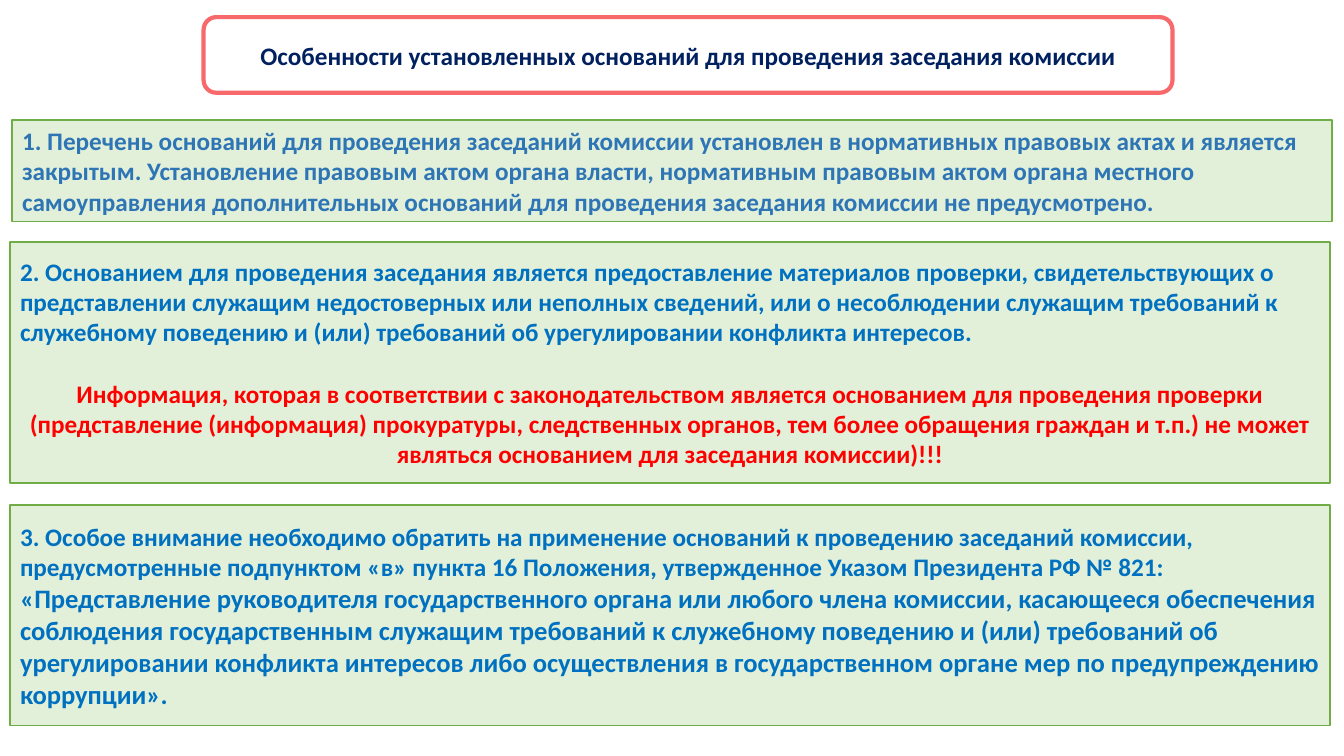
"""Build a slide on the grounds for holding a commission meeting."""
from pptx import Presentation
from pptx.dml.color import RGBColor
from pptx.enum.shapes import MSO_SHAPE
from pptx.enum.text import MSO_ANCHOR, MSO_AUTO_SIZE, PP_ALIGN
from pptx.util import Inches, Pt

RECT, ROUNDED = MSO_SHAPE.RECTANGLE, MSO_SHAPE.ROUNDED_RECTANGLE
MIDDLE, NO_FIT = MSO_ANCHOR.MIDDLE, MSO_AUTO_SIZE.NONE
LEFT, CENTER = PP_ALIGN.LEFT, PP_ALIGN.CENTER
WIDTH, HEIGHT = Inches(13.33), Inches(7.5)
FONT = "Calibri"
PANEL_WIDTH = 98.2
COLORS = {
    "panel": "E2F0D9",
    "border": "70AD47",
    "frame": "F8696B",
    "title": "002060",
    "steel": "2E75B6",
    "blue": "0070C0",
    "red": "FF0000",
}
TITLE = "Особенности установленных оснований для проведения заседания комиссии"
LIST_OF_GROUNDS = (
    "1. Перечень оснований для проведения заседаний комиссии установлен в нормативных "
    "правовых актах и является закрытым. Установление правовым актом органа власти, "
    "нормативным правовым актом органа местного самоуправления дополнительных оснований "
    "для проведения заседания комиссии не предусмотрено."
)
AUDIT_MATERIALS = (
    "2. Основанием для проведения заседания является предоставление материалов проверки, "
    "свидетельствующих о представлении служащим недостоверных или неполных сведений, или "
    "о несоблюдении служащим требований к служебному поведению и (или) требований об "
    "урегулировании конфликта интересов."
)
WARNING = (
    "Информация, которая в соответствии с законодательством является основанием для "
    "проведения проверки (представление (информация) прокуратуры, следственных органов, "
    "тем более обращения граждан и т.п.) не может являться основанием для заседания "
    "комиссии)!!!"
)
SPECIAL_ATTENTION = (
    "3. Особое внимание необходимо обратить на применение оснований к проведению "
    "заседаний комиссии, предусмотренные подпунктом «в» пункта 16 Положения, "
    "утвержденное Указом Президента РФ № 821:"
)
QUOTE = (
    "«Представление руководителя государственного органа или любого члена комиссии, "
    "касающееся обеспечения соблюдения государственным служащим требований к служебному "
    "поведению и (или) требований об урегулировании конфликта интересов либо "
    "осуществления в государственном органе мер по предупреждению коррупции»."
)


def rgb(name):
    """Return the named palette colour."""
    return RGBColor.from_string(COLORS[name])


def box(left, top, width, height):
    """Convert percentages of the slide into a position and size."""
    return (int(WIDTH * left / 100), int(HEIGHT * top / 100),
            int(WIDTH * width / 100), int(HEIGHT * height / 100))


def write(p, text, color, size=18, align=LEFT, before=0):
    """Fill a paragraph with bold text."""
    p.text = text
    p.alignment = align
    p.space_before = Pt(before)
    p.font.name, p.font.size, p.font.bold = FONT, Pt(size), True
    p.font.color.rgb = rgb(color)


def add_box(slide, kind, area, line, weight, fill=None):
    """Add an outlined shape, filled when a colour is given."""
    sp = slide.shapes.add_shape(kind, *box(*area))
    sp.shadow.inherit = False
    sp.line.color.rgb = rgb(line)
    sp.line.width = Pt(weight)
    if fill:
        sp.fill.solid()
        sp.fill.fore_color.rgb = rgb(fill)
    else:
        sp.fill.background()
    return sp


def add_panel(slide, left, top, height, paragraphs):
    """Add a green panel holding the given paragraphs."""
    sp = add_box(slide, RECT, (left, top, PANEL_WIDTH, height), "border", 1, "panel")
    tf = sp.text_frame
    tf.word_wrap = True
    tf.vertical_anchor = MIDDLE
    for i, paragraph in enumerate(paragraphs):
        write(tf.add_paragraph() if i else tf.paragraphs[0], **paragraph)


def add_title(slide):
    """Place the title inside its rounded frame."""
    add_box(slide, ROUNDED, (15.15, 2.27, 72.09, 10), "frame", 3)
    title = slide.shapes.title
    title.left, title.top, title.width, title.height = box(15.68, 5.33, 71.04, 4)
    tf = title.text_frame
    tf.margin_left = tf.margin_right = tf.margin_top = tf.margin_bottom = 0
    tf.word_wrap = True
    tf.auto_size = NO_FIT
    tf.vertical_anchor = MIDDLE
    write(tf.paragraphs[0], TITLE, "title", align=CENTER)


def main():
    """Build and save the slide."""
    prs = Presentation()
    prs.slide_width, prs.slide_height = WIDTH, HEIGHT
    slide = prs.slides.add_slide(prs.slide_layouts[5])
    add_title(slide)
    add_panel(slide, 0.9, 15.87, 13.47, [{"text": LIST_OF_GROUNDS, "color": "steel"}])
    add_panel(slide, 0.75, 32, 31.87, [
        {"text": AUDIT_MATERIALS, "color": "blue"},
        {"text": WARNING, "color": "red", "align": CENTER, "before": 22},
    ])
    add_panel(slide, 0.75, 66.8, 29.2, [
        {"text": SPECIAL_ATTENTION, "color": "blue"},
        {"text": QUOTE, "color": "blue", "size": 19},
    ])
    prs.save("out.pptx")


if __name__ == "__main__":
    main()
